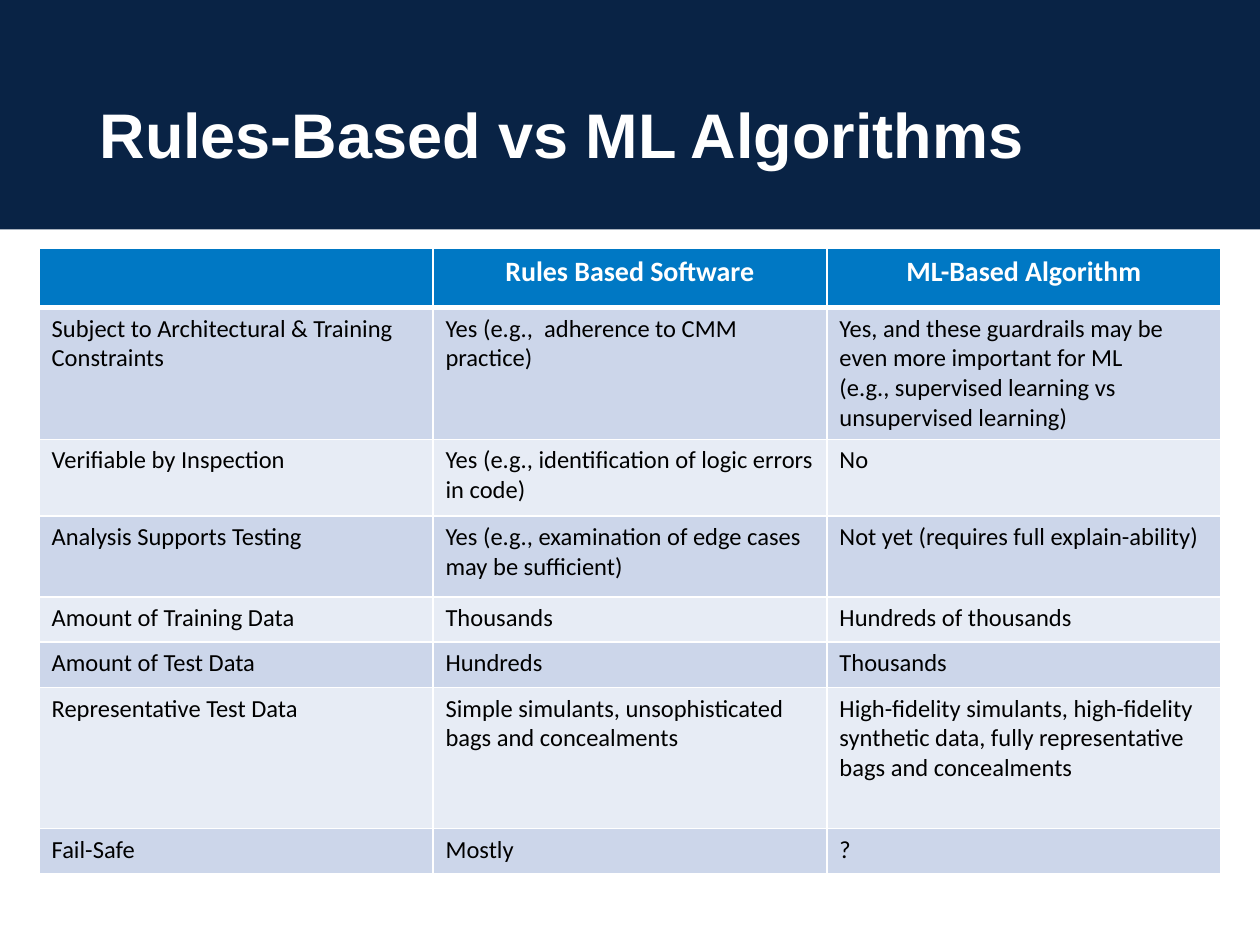
import dataclasses

import pptx
import pptx.dml.color
import pptx.enum.shapes
import pptx.enum.text
import pptx.oxml
import pptx.oxml.ns
import pptx.util

Inches = pptx.util.Inches
Pt = pptx.util.Pt
Align = pptx.enum.text.PP_ALIGN
Anchor = pptx.enum.text.MSO_ANCHOR


@dataclasses.dataclass(frozen=True)
class Theme:
    navy: str = "092345"
    blue: str = "0078C4"
    bands: tuple[str, str] = ("CCD6EA", "E7ECF5")
    white: str = "FFFFFF"
    black: str = "000000"
    title_font: str = "Arial"
    font: str = "Calibri"
    title_size: int = 36
    head_size: int = 16
    size: int = 14
    thin: int = 1
    thick: int = 3


@dataclasses.dataclass(frozen=True)
class Row:
    height: float
    cells: tuple[str, str, str]


THEME = Theme()

# Each line break in a cell starts a new paragraph
ROWS = (
    Row(0.47, ("", "Rules Based Software", "ML-Based Algorithm")),
    Row(0.86, ("Subject to Architectural & Training Constraints",
               "Yes (e.g.,  adherence to CMM practice)",
               "Yes, and these guardrails may be even more important for ML\n"
               "(e.g., supervised learning vs unsupervised learning)")),
    Row(0.61, ("Verifiable by Inspection",
               "Yes (e.g., identification of logic errors in code)",
               "No")),
    Row(0.64, ("Analysis Supports Testing",
               "Yes (e.g., examination of edge cases may be sufficient)",
               "Not yet (requires full explain-ability)")),
    Row(0.36, ("Amount of Training Data", "Thousands", "Hundreds of thousands")),
    Row(0.36, ("Amount of Test Data", "Hundreds", "Thousands")),
    Row(1.12, ("Representative Test Data",
               "Simple simulants, unsophisticated bags and concealments",
               "High-fidelity simulants, high-fidelity synthetic data, "
               "fully representative bags and concealments")),
    Row(0.36, ("Fail-Safe", "Mostly", "?")),
)


def paint(fill, shade: str) -> None:
    fill.solid()
    fill.fore_color.rgb = pptx.dml.color.RGBColor.from_string(shade)


def add_run(para, text: str, font: str, size: int, shade: str, bold: bool) -> None:
    run = para.add_run()
    run.text = text
    run.font.name = font
    run.font.size = Pt(size)
    run.font.bold = bold
    run.font.color.rgb = pptx.dml.color.RGBColor.from_string(shade)


def add_edges(cell, top: int, base: int) -> None:
    props = cell._tc.get_or_add_tcPr()
    widths = {"lnL": THEME.thin, "lnR": THEME.thin, "lnT": top, "lnB": base}
    for tag, width in widths.items():
        props.append(pptx.oxml.parse_xml(
            f'<a:{tag} {pptx.oxml.ns.nsdecls("a")} w="{Pt(width)}">'
            f'<a:solidFill><a:srgbClr val="{THEME.white}"/></a:solidFill>'
            f'</a:{tag}>'))


def fill_cell(cell, text: str, row: int) -> None:
    head = row == 0
    # The line under the head row is thick on both sides
    add_edges(cell, THEME.thick if row == 1 else THEME.thin,
              THEME.thick if head else THEME.thin)
    paint(cell.fill, THEME.blue if head else THEME.bands[(row - 1) % 2])
    if not text:
        return
    frame = cell.text_frame
    for i, line in enumerate(text.split("\n")):
        para = frame.add_paragraph() if i else frame.paragraphs[0]
        para.alignment = Align.CENTER if head else Align.LEFT
        add_run(para, line, THEME.font,
                THEME.head_size if head else THEME.size,
                THEME.white if head else THEME.black, head)


def add_title(slide, text: str) -> None:
    # Navy band, placed behind the title
    band = slide.shapes.add_shape(
        pptx.enum.shapes.MSO_SHAPE.RECTANGLE, 0, 0, Inches(10), Inches(1.82))
    band.shadow.inherit = False
    paint(band.fill, THEME.navy)
    band.line.fill.background()
    slide.shapes._spTree.insert(2, band._element)

    title = slide.shapes.title
    title.left, title.top = Inches(0.69), Inches(0.58)
    title.width, title.height = Inches(8.62), Inches(1.04)
    title.text_frame.vertical_anchor = Anchor.MIDDLE
    para = title.text_frame.paragraphs[0]
    para.alignment = Align.LEFT
    para.line_spacing = 0.9
    add_run(para, text, THEME.title_font, THEME.title_size, THEME.white, True)


def add_grid(slide, rows: tuple[Row, ...]) -> None:
    height = sum(row.height for row in rows)
    table = slide.shapes.add_table(
        len(rows), len(rows[0].cells), Inches(0.31), Inches(1.97),
        Inches(9.38), Inches(height)).table
    for r, row in enumerate(rows):
        table.rows[r].height = Inches(row.height)
        for c, text in enumerate(row.cells):
            fill_cell(table.cell(r, c), text, r)


def main() -> None:
    deck = pptx.Presentation()
    deck.slide_width, deck.slide_height = Inches(10), Inches(7.5)
    slide = deck.slides.add_slide(deck.slide_layouts[5])
    add_title(slide, "Rules-Based vs ML Algorithms")
    add_grid(slide, ROWS)
    deck.save("out.pptx")


if __name__ == "__main__":
    main()
